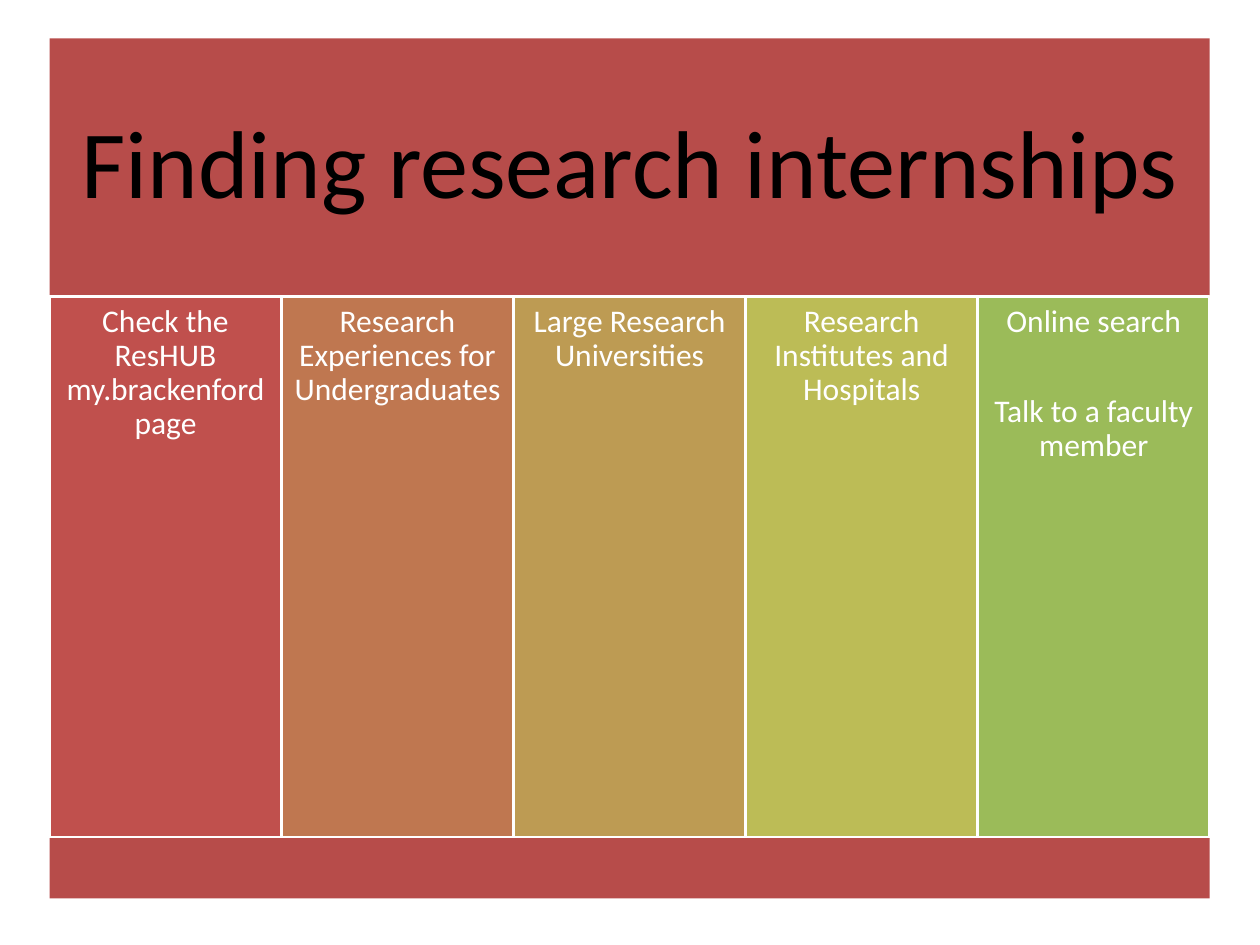
from dataclasses import dataclass

from pptx import Presentation
from pptx.dml.color import RGBColor
from pptx.enum.shapes import MSO_SHAPE
from pptx.enum.text import MSO_ANCHOR, MSO_AUTO_SIZE, PP_ALIGN
from pptx.util import Pt


@dataclass(frozen=True)
class Theme:
    font: str = "Calibri"
    band: str = "B74C4A"
    columns: tuple = ("C0504D", "BF7750", "BD9B53", "BCBC56", "9BBB59")
    title_text: str = "000000"
    column_text: str = "FFFFFF"
    divider: str = "FFFFFF"
    title_size: int = 55
    column_size: int = 18


THEME = Theme()
LEFT, WIDTH = 28.3, 663
HEADER_TOP, HEADER_HEIGHT = 22, 147.4
COLUMN_TOP, COLUMN_HEIGHT = 169.4, 309.6
FOOTER_TOP, FOOTER_HEIGHT = 479, 34.4
TOPIC_GAP = 32

TITLE = "Finding research internships"
COLUMNS = (
    ("Check the ResHUB my.brackenford page",),
    ("Research Experiences for Undergraduates",),
    ("Large Research Universities",),
    ("Research Institutes and Hospitals",),
    ("Online search", "Talk to a faculty member"),
)


def paint(shape, color):
    """Give a shape a solid fill."""
    shape.fill.solid()
    shape.fill.fore_color.rgb = RGBColor.from_string(color)


def write(shape, texts, size, color, inset, anchor):
    """Write centred paragraphs into a shape."""
    frame = shape.text_frame
    frame.text = "\n".join(texts)
    frame.word_wrap = True
    frame.auto_size = MSO_AUTO_SIZE.NONE
    frame.vertical_anchor = anchor
    frame.margin_left = frame.margin_right = Pt(inset)
    frame.margin_top = frame.margin_bottom = Pt(inset)
    for index, paragraph in enumerate(frame.paragraphs):
        paragraph.alignment = PP_ALIGN.CENTER
        paragraph.line_spacing = 0.9
        paragraph.space_before = Pt(TOPIC_GAP if index else 0)
        paragraph.font.name = THEME.font
        paragraph.font.size = Pt(size)
        paragraph.font.color.rgb = RGBColor.from_string(color)


def add_header(slide):
    """Turn the title placeholder into the header band."""
    header = slide.shapes.title
    header.left, header.top = Pt(LEFT), Pt(HEADER_TOP)
    header.width, header.height = Pt(WIDTH), Pt(HEADER_HEIGHT)
    paint(header, THEME.band)
    write(header, (TITLE,), THEME.title_size, THEME.title_text, 16.5, MSO_ANCHOR.MIDDLE)


def add_block(slide, left, top, width, height, color):
    """Add a plain filled rectangle without outline."""
    block = slide.shapes.add_shape(
        MSO_SHAPE.RECTANGLE, Pt(left), Pt(top), Pt(width), Pt(height)
    )
    block.shadow.inherit = False
    paint(block, color)
    block.line.fill.background()
    return block


def add_column(slide, left, width, topics, color):
    """Add one outlined column with its topics at the top."""
    column = add_block(slide, left, COLUMN_TOP, width, COLUMN_HEIGHT, color)
    column.line.color.rgb = RGBColor.from_string(THEME.divider)
    column.line.width = Pt(2)
    write(column, topics, THEME.column_size, THEME.column_text, 5, MSO_ANCHOR.TOP)


def main():
    """Build and save the slide."""
    presentation = Presentation()
    presentation.slide_width, presentation.slide_height = Pt(720), Pt(540)
    slide = presentation.slides.add_slide(presentation.slide_layouts[5])
    add_header(slide)
    column_width = WIDTH / len(COLUMNS)
    for index, (topics, color) in enumerate(zip(COLUMNS, THEME.columns)):
        add_column(slide, LEFT + index * column_width, column_width, topics, color)
    add_block(slide, LEFT, FOOTER_TOP, WIDTH, FOOTER_HEIGHT, THEME.band)
    presentation.save("out.pptx")


if __name__ == "__main__":
    main()
